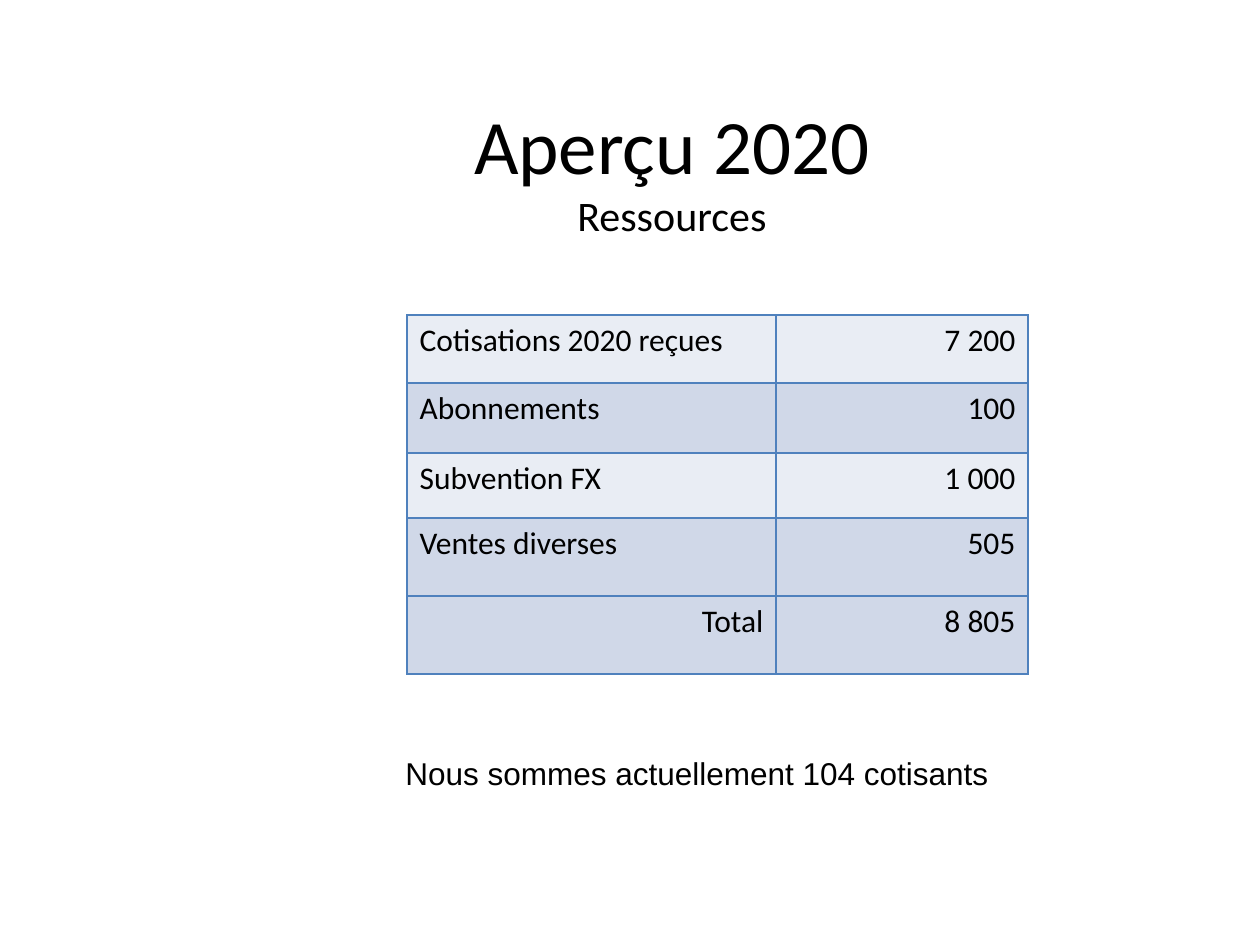
import pptx
import pptx.dml.color
import pptx.enum.text
import pptx.oxml
import pptx.oxml.ns
import pptx.util

PX = 914400 / 126
COLORS = {"text": "000000", "border": "4F81BD", "light": "E9EDF4", "dark": "D0D8E8"}
ALIGN = pptx.enum.text.PP_ALIGN
ANCHOR = pptx.enum.text.MSO_ANCHOR
ROWS = [
    ("Cotisations 2020 reçues", "7 200", 68, "light"),
    ("Abonnements", "100", 70, "dark"),
    ("Subvention FX", "1 000", 65, "light"),
    ("Ventes diverses", "505", 78, "dark"),
    ("Total", "8 805", 78, "dark"),
]


def px(n):
    return pptx.util.Emu(round(n * PX))


def rgb(name):
    return pptx.dml.color.RGBColor.from_string(COLORS[name])


def set_all(obj, values):
    for name, value in values.items():
        setattr(obj, name, value)


def add_run(p, text, size, font="Calibri"):
    r = p.add_run()
    r.text = text
    set_all(r.font, {"size": pptx.util.Pt(size), "name": font})
    r.font.color.rgb = rgb("text")


def add_box(s, box, anchor):
    tf = s.shapes.add_textbox(*map(px, box)).text_frame
    set_all(tf, {"word_wrap": True, "vertical_anchor": anchor})
    return tf.paragraphs[0]


def add_title(s, box):
    p = add_box(s, box, ANCHOR.MIDDLE)
    p.alignment = ALIGN.CENTER
    add_run(p, "Aperçu 2020", 44)
    p.add_line_break()
    add_run(p, "Ressources", 24)


def add_borders(cell):
    tcPr = cell._tc.get_or_add_tcPr()
    for side in "LRTB":
        tcPr.append(pptx.oxml.parse_xml(
            f'<a:ln{side} {pptx.oxml.ns.nsdecls("a")} w="12700"><a:solidFill>'
            f'<a:srgbClr val="{COLORS["border"]}"/></a:solidFill></a:ln{side}>'))


def fill_cell(cell, text, align, color):
    add_borders(cell)
    cell.fill.solid()
    cell.fill.fore_color.rgb = rgb(color)
    p = cell.text_frame.paragraphs[0]
    p.alignment = align
    add_run(p, text, 18)


def add_resources(s, box):
    tbl = s.shapes.add_table(len(ROWS), 2, *map(px, box)).table
    set_all(tbl, {"first_row": False, "horz_banding": False})
    label_width = 369
    for col, width in zip(tbl.columns, (label_width, box[2] - label_width)):
        col.width = px(width)
    for i, (label, amount, height, color) in enumerate(ROWS):
        tbl.rows[i].height = px(height)
        label_align = ALIGN.RIGHT if label == "Total" else ALIGN.LEFT
        fill_cell(tbl.cell(i, 0), label, label_align, color)
        fill_cell(tbl.cell(i, 1), amount, ALIGN.RIGHT, color)


def add_note(s, box):
    p = add_box(s, box, ANCHOR.TOP)
    add_run(p, "Nous sommes actuellement 104 cotisants", 18, "Arial")


def main():
    prs = pptx.Presentation()
    set_all(prs, {"slide_width": px(1260), "slide_height": px(945)})
    s = prs.slides.add_slide(prs.slide_layouts[6])
    add_title(s, (185, 103, 974, 131))
    add_resources(s, (407, 315, 621, 359))
    add_note(s, (393, 748, 673, 50))
    prs.save("out.pptx")


if __name__ == "__main__":
    main()
